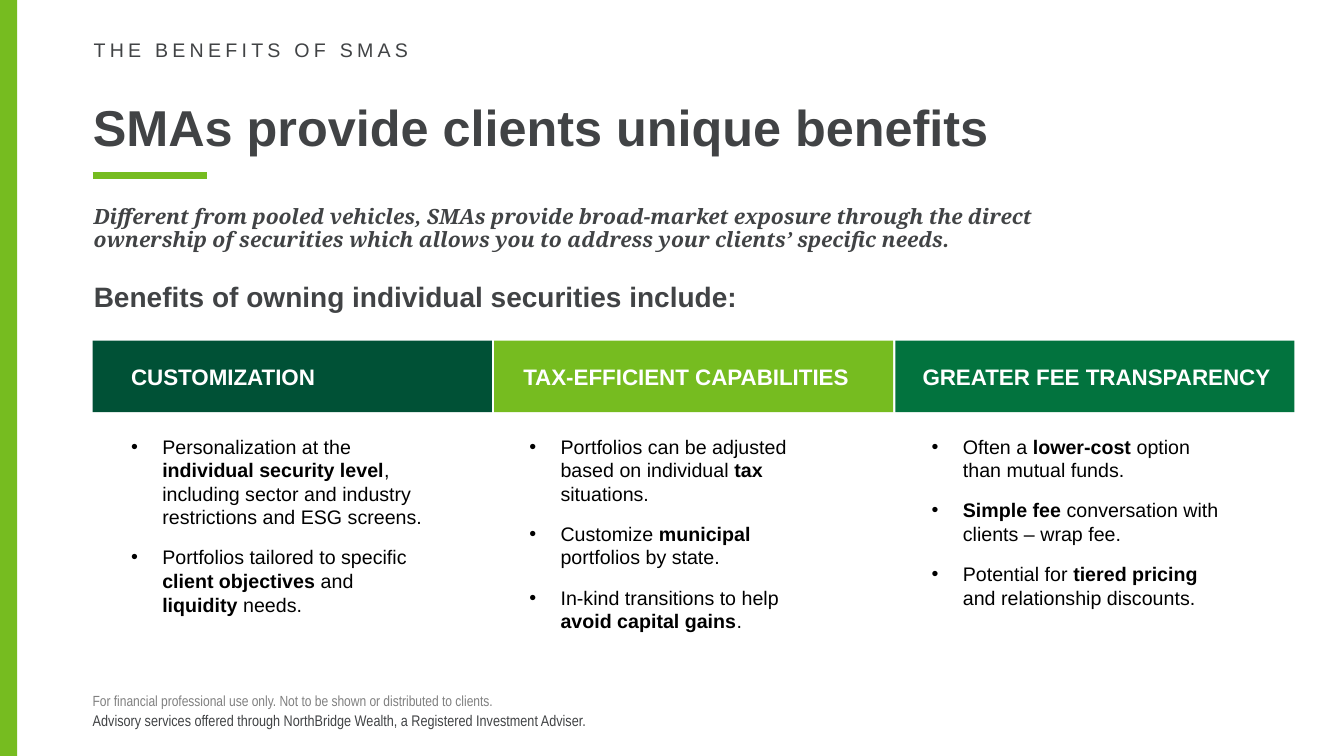
import pptx
import pptx.chart.data
import pptx.dml.color
import pptx.enum.shapes
import pptx.enum.text
import pptx.oxml.ns
import pptx.util
import lxml.etree

EYEBROW = "THE BENEFITS OF SMAS"
TITLE = "SMAs provide clients unique benefits"
SUMMARY = ("Different from pooled vehicles, SMAs provide broad-market exposure through the direct "
           "ownership of securities which allows you to address your clients’ specific needs.")
HEADING = "Benefits of owning individual securities include:"
AUDIENCE = "For financial professional use only. Not to be shown or distributed to clients."
ADVISER = "Advisory services offered through NorthBridge Wealth, a Registered Investment Adviser."

# BOLD_MARK
BENEFITS = [
    {"label": "CUSTOMIZATION", "color": "005136", "label_indent": 0.38,
     "list_left": 1.2, "list_width": 3.14, "points": [
         "Personalization at the *individual security level*, including sector and industry "
         "restrictions and ESG screens.",
         "Portfolios tailored to specific *client objectives *and *liquidity* needs."]},
    {"label": "TAX-EFFICIENT CAPABILITIES", "color": "76BC20", "label_indent": 0.29,
     "list_left": 5.15, "list_width": 3.05, "points": [
         "Portfolios can be adjusted based on individual *tax* situations.",
         "Customize *municipal* portfolios by state.",
         "In-kind transitions to help *avoid capital gains*."]},
    {"label": "GREATER FEE TRANSPARENCY", "color": "02733E", "label_indent": 0.27,
     "list_left": 9.14, "list_width": 3.05, "points": [
         "Often a *lower-cost* option than mutual funds.",
         "*Simple fee *conversation with clients – wrap fee.",
         "Potential for *tiered pricing *and relationship discounts."]},
]

WIDTH, HEIGHT = 13.33, 7.5
MARGIN = 0.92
INSET = 0.1
CARD_WIDTH, CARD_GAP = 3.96, 0.02
CARD_TOP, CARD_HEIGHT = 3.38, 0.71
LIST_TOP, LIST_HEIGHT = 4.26, 2.09
BULLET_INDENT = 0.31
GREEN, INK, GREY, BLACK, WHITE = "76BC20", "414345", "808080", "000000", "FFFFFF"
ANCHOR = pptx.enum.text.MSO_ANCHOR


def rgb(color):
    return pptx.dml.color.RGBColor.from_string(color)


def place(shape, left, top, width, height):
    shape.left, shape.top, shape.width, shape.height = (
        pptx.util.Inches(value) for value in (left, top, width, height))


def set_frame(shape, anchor=ANCHOR.TOP, side=INSET, edge=INSET / 2):
    frame = shape.text_frame
    frame.word_wrap = True
    frame.auto_size = pptx.enum.text.MSO_AUTO_SIZE.NONE
    frame.vertical_anchor = anchor
    frame.margin_left = frame.margin_right = pptx.util.Inches(side)
    frame.margin_top = frame.margin_bottom = pptx.util.Inches(edge)
    return frame


def set_paragraph(paragraph, line=1.0, before=0, after=0):
    paragraph.alignment = pptx.enum.text.PP_ALIGN.LEFT
    paragraph.line_spacing = line
    paragraph.space_before = pptx.util.Pt(before)
    paragraph.space_after = pptx.util.Pt(after)


def set_font(run, size, color, name="Arial", bold=False, italic=False):
    font = run.font
    font.size, font.name = pptx.util.Pt(size), name
    font.bold, font.italic = bold, italic
    font.color.rgb = rgb(color)


def set_bullet(paragraph, character=None):
    properties = paragraph._p.get_or_add_pPr()
    indent = pptx.util.Inches(BULLET_INDENT if character else 0)
    properties.set("marL", str(indent))
    properties.set("indent", str(-indent))
    if character:
        font = lxml.etree.SubElement(properties, pptx.oxml.ns.qn("a:buFont"))
        font.set("typeface", "Arial")
        bullet = lxml.etree.SubElement(properties, pptx.oxml.ns.qn("a:buChar"))
        bullet.set("char", character)
    else:
        lxml.etree.SubElement(properties, pptx.oxml.ns.qn("a:buNone"))


def write_line(shape, box, text, size, color, anchor=ANCHOR.TOP, side=INSET, edge=INSET / 2,
               line=1.0, before=0, **style):
    place(shape, *box)
    frame = set_frame(shape, anchor, side, edge)
    frame.text = text
    paragraph = frame.paragraphs[0]
    set_paragraph(paragraph, line, before)
    set_bullet(paragraph)
    set_font(paragraph.runs[0], size, color, **style)
    return paragraph.runs[0]


def write_list(shape, benefit):
    place(shape, benefit["list_left"], LIST_TOP, benefit["list_width"], LIST_HEIGHT)
    frame = set_frame(shape)
    for index, point in enumerate(benefit["points"]):
        paragraph = frame.add_paragraph() if index else frame.paragraphs[0]
        set_paragraph(paragraph, after=12)
        set_bullet(paragraph, "•")
        for part, text in enumerate(point.split("*")):
            if text:
                run = paragraph.add_run()
                run.text = text
                set_font(run, 14, BLACK, bold=part % 2 == 1)


def add_rectangle(slide, box, color):
    shape = slide.shapes.add_shape(
        pptx.enum.shapes.MSO_SHAPE.RECTANGLE, *(pptx.util.Inches(value) for value in box))
    shape.shadow.inherit = False
    shape.fill.solid()
    shape.fill.fore_color.rgb = rgb(color)
    shape.line.fill.background()
    return shape


def add_rule(slide, left, top, width):
    rule = slide.shapes.add_connector(
        pptx.enum.shapes.MSO_CONNECTOR.STRAIGHT,
        *(pptx.util.Inches(value) for value in (left, top, left + width, top)))
    rule.line.color.rgb = rgb(GREEN)
    rule.line.width = pptx.util.Pt(5)
    lxml.etree.SubElement(rule._element.spPr, pptx.oxml.ns.qn("a:effectLst"))


def add_text(slide, box, *content, **style):
    return write_line(slide.shapes.add_textbox(0, 0, 0, 0), box, *content, **style)


def main():
    presentation = pptx.Presentation()
    presentation.slide_width = pptx.util.Inches(WIDTH)
    presentation.slide_height = pptx.util.Inches(HEIGHT)
    slide = presentation.slides.add_slide(
        presentation.slide_layouts.get_by_name("Comparison"))
    title, heading, *lists = slide.placeholders
    text_left = MARGIN - INSET + 0.01

    add_rectangle(slide, (0, 0, 0.17, HEIGHT), GREEN)
    add_rule(slide, MARGIN, 1.74, 1.13)
    eyebrow = add_text(slide, (text_left, 0.35, 4.68, 0.4), EYEBROW, 14, INK, line=0.9, before=10)
    eyebrow._r.get_or_add_rPr().set("spc", "300")
    write_line(title, (MARGIN, 0.62, 11.77, 0.94), TITLE, 36, INK,
               anchor=ANCHOR.BOTTOM, side=0, edge=0, line=0.9, bold=True)
    add_text(slide, (text_left, 2, 10.66, 0.48), SUMMARY, 15, INK,
             line=0.9, before=10, name="Noto Serif", bold=True, italic=True)
    write_line(heading, (text_left, 2.76, 6.96, 0.48), HEADING, 20, INK,
               line=0.9, before=10, bold=True)

    for column, (benefit, placeholder) in enumerate(zip(BENEFITS, lists)):
        left = MARGIN + column * (CARD_WIDTH + CARD_GAP)
        box = (left, CARD_TOP, CARD_WIDTH, CARD_HEIGHT)
        card = add_rectangle(slide, box, benefit["color"])
        write_line(card, box, benefit["label"], 16, WHITE, anchor=ANCHOR.MIDDLE, side=0, bold=True)
        card.text_frame.margin_left = pptx.util.Inches(benefit["label_indent"])
        write_list(placeholder, benefit)

    add_text(slide, (MARGIN - INSET, 6.81, 11.49, 0.29), AUDIENCE, 10.5, GREY, name="Arial Narrow")
    add_text(slide, (MARGIN, 6.95, 7.64, 0.4), ADVISER, 11, INK,
             anchor=ANCHOR.MIDDLE, side=0, edge=0, name="Arial Narrow")
    presentation.save("out.pptx")


if __name__ == "__main__":
    main()
